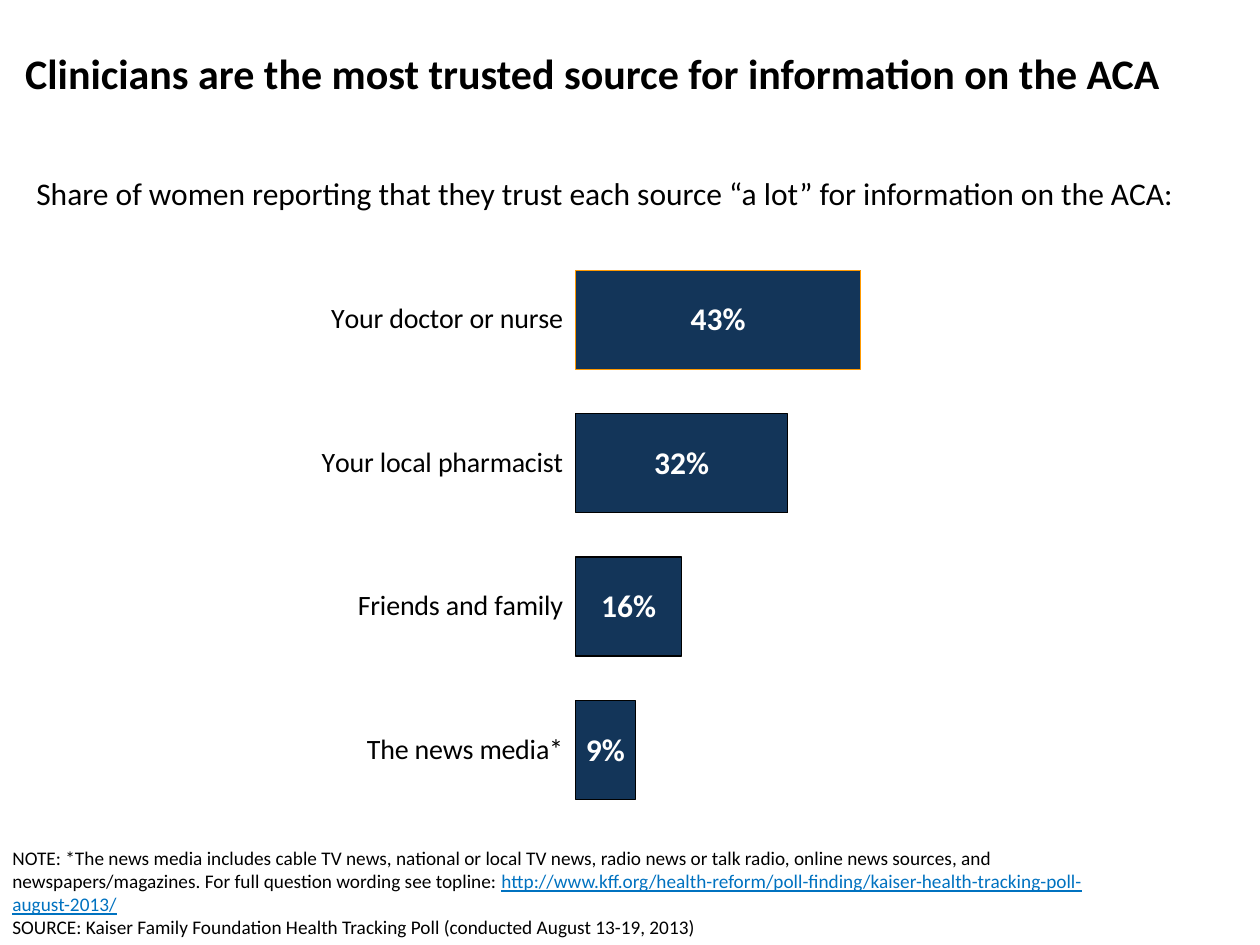
from lxml import etree
from pptx import Presentation
from pptx.chart.data import CategoryChartData
from pptx.dml.color import RGBColor
from pptx.enum import chart as ch, text
from pptx.oxml import ns
from pptx.util import Inches, Pt

# Content
TITLE = "Clinicians are the most trusted source for information on the ACA"
SUBTITLE = ("Share of women reporting that they trust each source “a lot” "
            "for information on the ACA:")
TRUST = [
    ("Your doctor or nurse", 0.43),
    ("Your local pharmacist", 0.32),
    ("Friends and family", 0.16),
    ("The news media*", 0.09),
]
NOTE = ("NOTE: *The news media includes cable TV news, national or local TV news, "
        "radio news or talk radio, online news sources, and newspapers/magazines. "
        "For full question wording see topline: ")
URL = "http://www.kff.org/health-reform/poll-finding/kaiser-health-tracking-poll-august-2013/"
SOURCE = ("SOURCE: Kaiser Family Foundation Health Tracking Poll "
          "(conducted August 13-19, 2013)")

FONT = "Calibri"
BLACK = RGBColor(0x00, 0x00, 0x00)
WHITE = RGBColor(0xFF, 0xFF, 0xFF)
NAVY = RGBColor(0x13, 0x35, 0x59)
ORANGE = RGBColor(0xFF, 0x99, 0x00)
LINK = RGBColor(0x00, 0x72, 0xC0)
PLOT = {"x": 0.455, "y": 0.065, "w": 0.536, "h": 0.9}


def style(font, size, color=BLACK, bold=False):
    font.name, font.size, font.bold = FONT, Pt(size), bold
    font.color.rgb = color


def place(sp, left, top, width, height):
    sp.left, sp.top = Inches(left), Inches(top)
    sp.width, sp.height = Inches(width), Inches(height)


def add_text(s, box, anchor=text.MSO_ANCHOR.TOP):
    tf = s.shapes.add_textbox(*map(Inches, box)).text_frame
    tf.word_wrap = True
    tf.vertical_anchor = anchor
    return tf


def add_run(p, words, size, color=BLACK):
    r = p.add_run()
    r.text = words
    style(r.font, size, color)
    return r


def set_plot_layout(chart):
    area = chart._chartSpace.chart.plotArea
    for old in area.findall(ns.qn("c:layout")):
        area.remove(old)
    layout = etree.Element(ns.qn("c:layout"))
    manual = etree.SubElement(layout, ns.qn("c:manualLayout"))
    settings = {"layoutTarget": "inner", "xMode": "edge", "yMode": "edge", **PLOT}
    for tag, val in settings.items():
        etree.SubElement(manual, ns.qn("c:" + tag)).set("val", str(val))
    area.insert(0, layout)


prs = Presentation()
prs.slide_width, prs.slide_height = Inches(10), Inches(7.5)
s = prs.slides.add_slide(prs.slide_layouts[5])

# Bar chart
data = CategoryChartData(number_format="0%")
data.categories = [name for name, _ in TRUST]
data.add_series("Series 1", [share for _, share in TRUST])
chart = s.shapes.add_chart(
    ch.XL_CHART_TYPE.BAR_CLUSTERED,
    *map(Inches, (0.1, 1.64, 9.82, 5.06)), data).chart
chart.has_legend = chart.has_title = False
style(chart.font, 18)
set_plot_layout(chart)

cat = chart.category_axis
cat.reverse_order = True
cat.format.line.fill.background()
style(cat.tick_labels.font, 16)

val = chart.value_axis
val.minimum_scale, val.maximum_scale = 0, 1
val.has_major_gridlines = False
val.visible = False

plot = chart.plots[0]
plot.gap_width = 45
plot.vary_by_categories = False
bars = plot.series[0]
first = bars.points[0]
for part, line_color in ((bars, BLACK), (first, ORANGE)):
    part.format.fill.solid()
    part.format.fill.fore_color.rgb = NAVY
    part.format.line.color.rgb = line_color
    part.format.line.width = Pt(0.75)

labels = bars.data_labels
labels.show_value = True
labels.position = ch.XL_LABEL_POSITION.CENTER
labels.number_format, labels.number_format_is_linked = "0%", False
style(labels.font, 18, WHITE, bold=True)

# Note and source
tf = add_text(s, (0, 6.9, 9.1, 0.6), text.MSO_ANCHOR.BOTTOM)
p = tf.paragraphs[0]
add_run(p, NOTE, 11)
add_run(p, URL, 11, LINK).font.underline = True
add_run(tf.add_paragraph(), SOURCE, 11)

# Title
title = s.shapes.title
place(title, 0.1, 0.08, 9.8, 1)
tf = title.text_frame
tf.text = TITLE
tf.auto_size = text.MSO_AUTO_SIZE.NONE
tf.vertical_anchor = text.MSO_ANCHOR.MIDDLE
p = tf.paragraphs[0]
p.alignment = text.PP_ALIGN.LEFT
style(p.runs[0].font, 24, bold=True)

# Subtitle
tf = add_text(s, (0.19, 1.33, 9.67, 0.72))
add_run(tf.paragraphs[0], SUBTITLE, 18)

prs.save("out.pptx")
